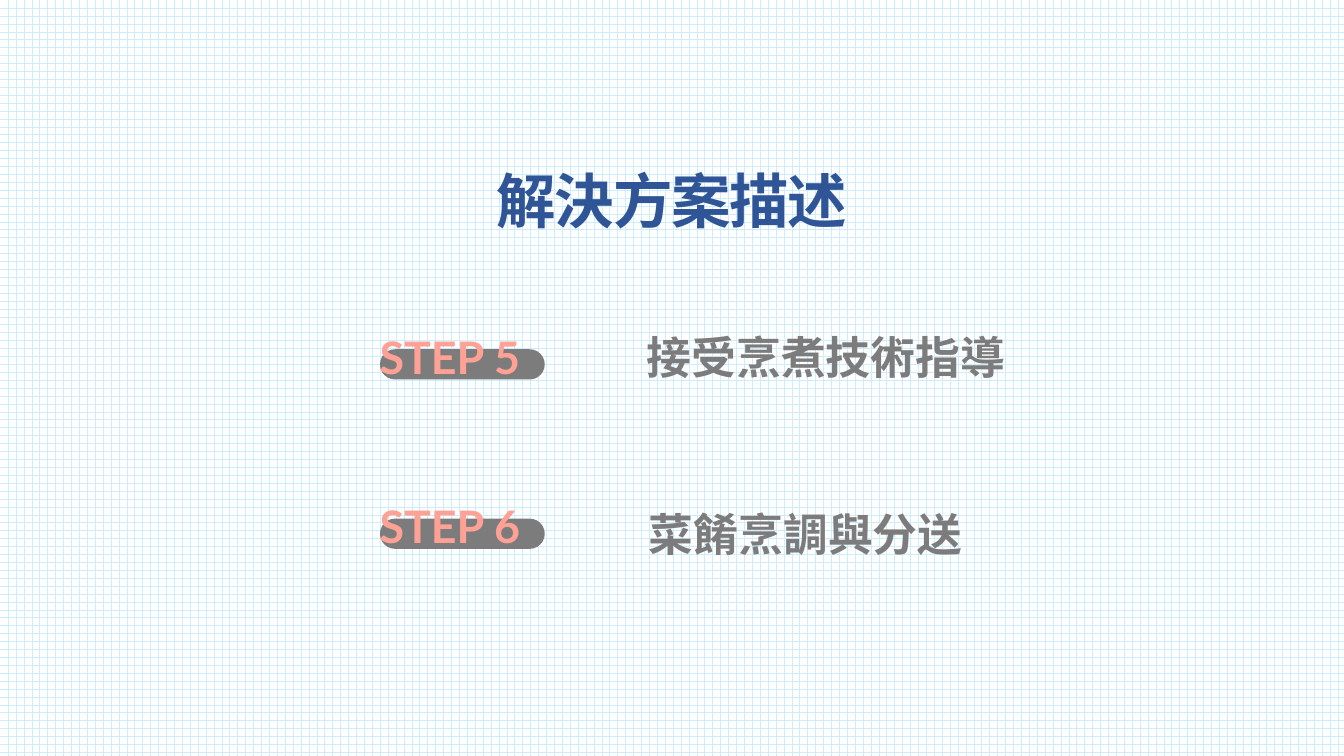
from dataclasses import dataclass

from pptx import Presentation
from pptx.dml.color import RGBColor
from pptx.enum.dml import MSO_PATTERN as Pattern
from pptx.enum.shapes import MSO_SHAPE as Shape
from pptx.enum.text import MSO_ANCHOR as Anchor, MSO_AUTO_SIZE as AutoSize, PP_ALIGN as Align
from pptx.util import Emu, Pt

EMU_PER_PX = 9144  # 100 px to the inch


def px(length):
    return Emu(length * EMU_PER_PX)


@dataclass(frozen=True)
class Theme:
    font: str = "Lato"
    title_size: int = 85
    body_size: int = 64
    title_spacing: float = -1.7
    title: str = "2F5597"
    body: str = "7C7C7C"
    accent: str = "FFA295"
    grid: str = "CCECFF"
    paper: str = "FFFFFF"


class SlideBuilder:
    def __init__(self, page, theme):
        self.page = page
        self.theme = theme

    def grid_background(self):
        fill = self.page.background.fill
        fill.patterned()
        fill.pattern = Pattern.DOTTED_GRID
        fill.fore_color.rgb = RGBColor.from_string(self.theme.grid)
        fill.back_color.rgb = RGBColor.from_string(self.theme.paper)

    def pill(self, left, top, width, height):
        shape = self.page.shapes.add_shape(
            Shape.ROUNDED_RECTANGLE, px(left), px(top), px(width), px(height))
        shape.adjustments[0] = 0.5
        shape.shadow.inherit = False
        shape.fill.solid()
        shape.fill.fore_color.rgb = RGBColor.from_string(self.theme.body)
        shape.line.fill.background()

    def text(self, words, left, top, width, height, color, size, align=Align.CENTER):
        box = self.page.shapes.add_textbox(px(left), px(top), px(width), px(height))
        frame = box.text_frame
        frame.word_wrap = True
        frame.auto_size = AutoSize.SHAPE_TO_FIT_TEXT
        para = frame.paragraphs[0]
        para.text = words
        para.alignment = align
        para.font.name = self.theme.font
        para.font.size = Pt(size)
        para.font.bold = True
        para.font.color.rgb = RGBColor.from_string(color)
        return frame

    def title(self, words, left, top, width, height):
        frame = self.text(words, left, top, width, height,
                          self.theme.title, self.theme.title_size)
        frame.auto_size = AutoSize.NONE
        frame.vertical_anchor = Anchor.MIDDLE
        frame.margin_left = frame.margin_right = px(27)
        frame.margin_top = frame.margin_bottom = px(27)
        para = frame.paragraphs[0]
        para.line_spacing = 0.8
        span = para.runs[0]
        span.font._element.set("spc", str(round(self.theme.title_spacing * 100)))


def main():
    deck = Presentation()
    deck.slide_width, deck.slide_height = px(2667), px(1500)
    theme = Theme()
    builder = SlideBuilder(deck.slides.add_slide(deck.slide_layouts[6]), theme)

    builder.grid_background()
    builder.title("解決方案描述", 91, 325, 2485, 167)

    # Steps: label over a pill, with its description to the right
    first_top, step_pitch = 649, 336
    steps = [
        ("STEP 5", "接受烹煮技術指導", 1254, 649, 770, Align.CENTER),
        ("STEP 6", "菜餚烹調與分送", 1278, 1000, 746, Align.LEFT),
    ]
    for index, (label, words, left, top, width, align) in enumerate(steps):
        label_top = first_top + index * step_pitch
        builder.pill(754, label_top + 44, 327, 60)
        builder.text(label, 704, label_top, 377, 118, theme.accent, theme.body_size)
        builder.text(words, left, top, width, 118, theme.body, theme.body_size, align)

    deck.save("out.pptx")


if __name__ == "__main__":
    main()
